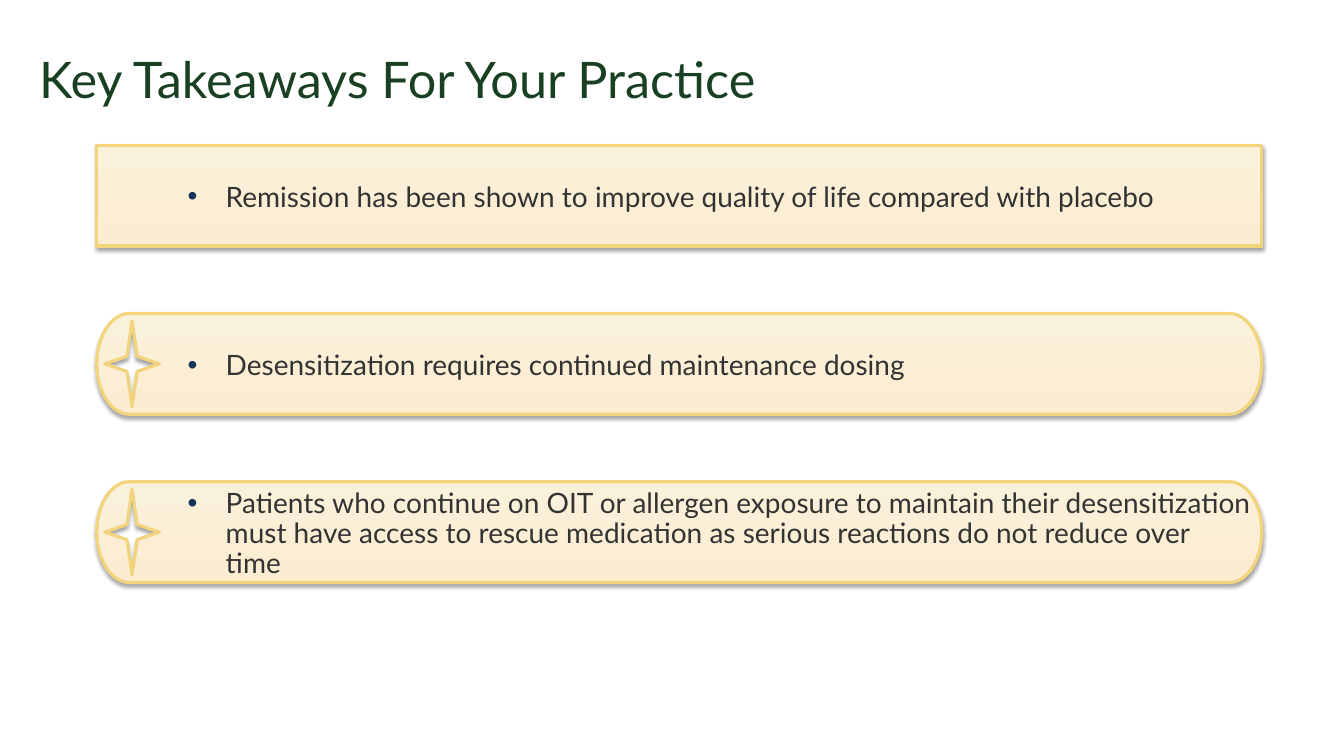
from dataclasses import dataclass
from math import cos, pi, sin

from lxml.etree import SubElement
from pptx import Presentation
from pptx.dml.color import RGBColor
from pptx.enum.shapes import MSO_SHAPE
from pptx.enum.text import MSO_ANCHOR, PP_ALIGN
from pptx.oxml.ns import qn
from pptx.util import Cm, Pt


@dataclass(frozen=True)
class Theme:
    font: str = "Lato"
    title_size: int = 36
    body_size: int = 20
    title: str = "1A4023"
    body: str = "333333"
    bullet: str = "153359"
    border: str = "F2D47C"
    shadow: str = "000000"
    gradient: tuple = ("FAF1DA", "FCEDD2")


THEME = Theme()
BAR_LEFT, BAR_TOP, BAR_WIDTH, BAR_HEIGHT = 2.44, 3.66, 29.36, 2.54
BAR_STEP = 4.24
CORNER_WIDTH = 0.82
STAR_CENTER = 0.89
STAR_TIP = (0.69, 1.08)
STAR_NOTCH = (0.13, 0.19)
TAKEAWAYS = (
    "Remission has been shown to improve quality of life compared with placebo",
    "Desensitization requires continued maintenance dosing",
    "Patients who continue on OIT or allergen exposure to maintain their "
    "desensitization must have access to rescue medication as serious "
    "reactions do not reduce over time",
)


def apply_format(target, values):
    for name, value in values.items():
        setattr(target, name, value)


def write_text(shape, text, size, color, frame_format):
    apply_format(shape.text_frame, {
        "word_wrap": True, "vertical_anchor": MSO_ANCHOR.MIDDLE, **frame_format})
    paragraph = shape.text_frame.paragraphs[0]
    apply_format(paragraph, {"line_spacing": 0.9, "alignment": PP_ALIGN.LEFT})
    run = paragraph.add_run()
    run.text = text
    apply_format(run.font, {"name": THEME.font, "size": Pt(size), "bold": False})
    run.font.color.rgb = RGBColor.from_string(color)
    return paragraph


def add_bullet(paragraph):
    properties = paragraph._p.get_or_add_pPr()
    for name, value in {"marL": Cm(0.96), "indent": -Cm(0.96)}.items():
        properties.set(name, str(int(value)))
    bullet_color = SubElement(properties, qn("a:buClr"))
    SubElement(bullet_color, qn("a:srgbClr"), val=THEME.bullet)
    SubElement(properties, qn("a:buFont"), typeface="Arial")
    SubElement(properties, qn("a:buChar"), char="•")


def add_shadow(shape):
    shape.shadow.inherit = False
    effects = shape._element.spPr.find(qn("a:effectLst"))
    shadow = SubElement(effects, qn("a:outerShdw"), blurRad=str(Pt(3.1)),
                        dist=str(Pt(1.8)), dir="5400000", rotWithShape="0")
    color = SubElement(shadow, qn("a:srgbClr"), val=THEME.shadow)
    SubElement(color, qn("a:alpha"), val="35000")


def ellipse_points(center_x, center_y, radius_x, radius_y, start, steps=24):
    return [(Cm(center_x + radius_x * cos(start + pi * step / steps)),
             Cm(center_y + radius_y * sin(start + pi * step / steps)))
            for step in range(steps + 1)]


def star_points(center_x, center_y):
    points = []
    for corner in range(8):
        angle = -pi / 2 - corner * pi / 4
        if corner % 2:
            radius_x, radius_y = (length * 2 ** 0.5 for length in STAR_NOTCH)
        else:
            radius_x, radius_y = STAR_TIP
        points.append((Cm(center_x + radius_x * cos(angle)),
                       Cm(center_y + radius_y * sin(angle))))
    return points


def add_star_pill(slide, top):
    middle = top + BAR_HEIGHT / 2
    right_end = ellipse_points(BAR_LEFT + BAR_WIDTH - CORNER_WIDTH, middle,
                               CORNER_WIDTH, BAR_HEIGHT / 2, -pi / 2)
    left_end = ellipse_points(BAR_LEFT + CORNER_WIDTH, middle,
                              CORNER_WIDTH, BAR_HEIGHT / 2, pi / 2)
    star = star_points(BAR_LEFT + STAR_CENTER, middle)
    builder = slide.shapes.build_freeform(*star[0])
    builder.add_line_segments(star[1:], close=True)
    builder.move_to(*left_end[-1])
    builder.add_line_segments(right_end + left_end, close=True)
    return builder.convert_to_shape()


def add_rectangle(slide, top):
    return slide.shapes.add_shape(MSO_SHAPE.RECTANGLE, Cm(BAR_LEFT), Cm(top),
                                  Cm(BAR_WIDTH), Cm(BAR_HEIGHT))


def style_takeaway(shape, text):
    shape.fill.gradient()
    shape.fill.gradient_angle = 270
    for stop, color in zip(shape.fill.gradient_stops, THEME.gradient):
        stop.color.rgb = RGBColor.from_string(color)
    shape.line.width = Pt(2.25)
    shape.line.color.rgb = RGBColor.from_string(THEME.border)
    add_shadow(shape)
    paragraph = write_text(shape, text, THEME.body_size, THEME.body, {
        "margin_left": Cm(2.29), "margin_top": Cm(0.25),
        "margin_right": Cm(0.25), "margin_bottom": Cm(0.13)})
    add_bullet(paragraph)


def add_title(slide, text):
    title = slide.shapes.add_textbox(Cm(0.74), Cm(0.48), Cm(32.46), Cm(3.18))
    write_text(title, text, THEME.title_size, THEME.title, {})


def main():
    presentation = Presentation()
    apply_format(presentation, {"slide_width": Cm(33.87), "slide_height": Cm(19.05)})
    slide = presentation.slides.add_slide(presentation.slide_layouts[6])
    add_title(slide, "Key Takeaways For Your Practice")
    for index, text in enumerate(TAKEAWAYS):
        add_bar = add_star_pill if index else add_rectangle
        style_takeaway(add_bar(slide, BAR_TOP + index * BAR_STEP), text)
    presentation.save("out.pptx")


if __name__ == "__main__":
    main()
